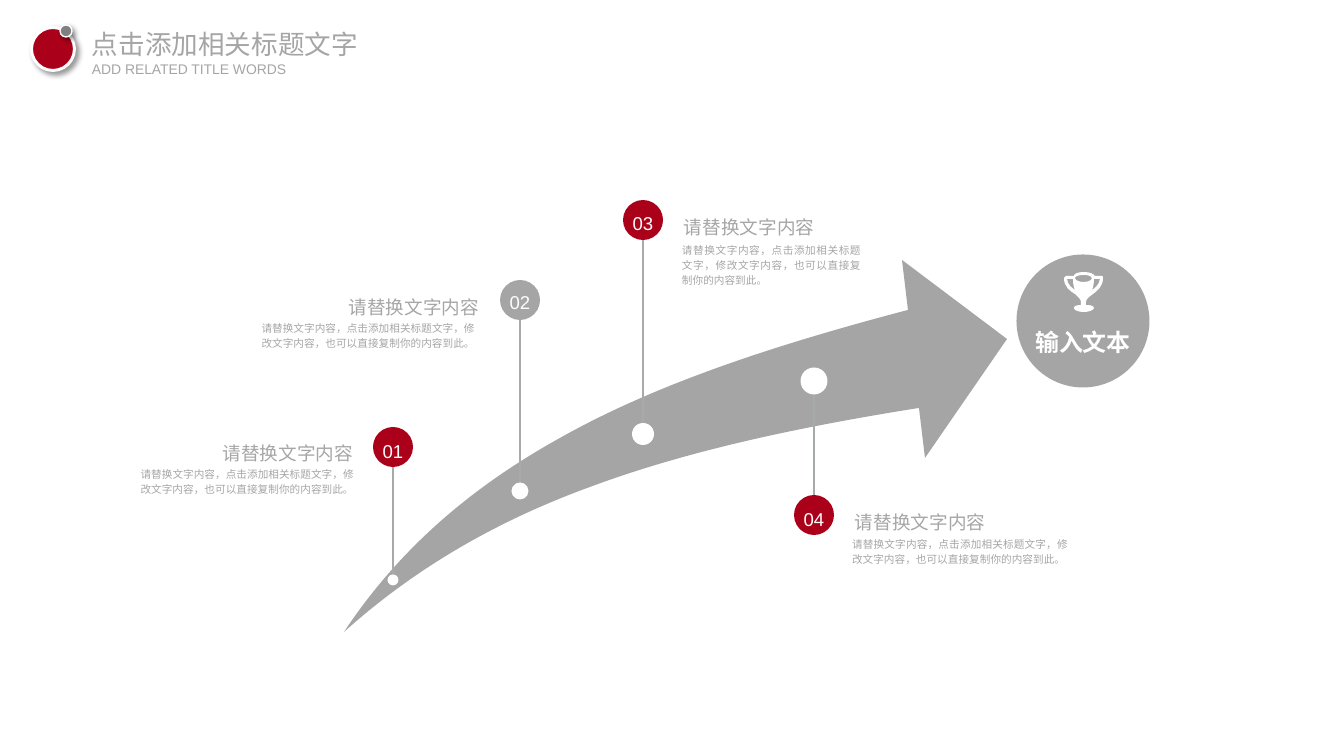
"""Build a slide with a rising curved arrow, four milestones and a goal."""
from lxml import etree
from pptx import Presentation
from pptx import util as u
from pptx.dml.color import RGBColor
from pptx.enum import shapes, text
from pptx.oxml import ns

PX = 9565
RED = RGBColor(0xAB, 0x00, 0x19)
GRAY = RGBColor(0xA5, 0xA5, 0xA5)
TEXT_GRAY = RGBColor(0xA6, 0xA6, 0xA6)
LINE_GRAY = RGBColor(0xA6, 0xAA, 0xA9)
DARK_GRAY = RGBColor(0x80, 0x80, 0x80)
NEAR_WHITE = RGBColor(0xFC, 0xFC, 0xFC)
WHITE = RGBColor(0xFF, 0xFF, 0xFF)
LEFT, CENTER = text.PP_ALIGN.LEFT, text.PP_ALIGN.CENTER
RIGHT, JUSTIFY = text.PP_ALIGN.RIGHT, text.PP_ALIGN.JUSTIFY
TOP, MIDDLE = text.MSO_ANCHOR.TOP, text.MSO_ANCHOR.MIDDLE
GROW, FIXED = text.MSO_AUTO_SIZE.SHAPE_TO_FIT_TEXT, text.MSO_AUTO_SIZE.NONE

presentation = Presentation()
presentation.slide_width = 1344 * PX
presentation.slide_height = 756 * PX
slide = presentation.slides.add_slide(presentation.slide_layouts[6])


def add_text(box, wording, size, color, align=LEFT, anchor=TOP, fit=GROW,
             spacing=1.2, before=10, wrap=True, bold=False):
    shape = slide.shapes.add_textbox(*(length * PX for length in box))
    frame = shape.text_frame
    frame.margin_left = frame.margin_right = frame.margin_top = frame.margin_bottom = 0
    frame.word_wrap = wrap
    frame.auto_size = fit
    frame.vertical_anchor = anchor
    paragraph = frame.paragraphs[0]
    paragraph.alignment = align
    paragraph.line_spacing = spacing
    paragraph.space_before = u.Pt(before)
    run = paragraph.add_run()
    run.text = wording
    run.font.name = "Arial"
    run.font.size = u.Pt(size)
    run.font.bold = bold
    run.font.color.rgb = color


def add_circle(center_x, center_y, diameter, color):
    size = diameter * PX
    shape = slide.shapes.add_shape(
        shapes.MSO_SHAPE.OVAL, center_x * PX - size // 2, center_y * PX - size // 2, size, size)
    shape.fill.solid()
    shape.fill.fore_color.rgb = color
    shape.line.fill.background()
    shape.shadow.inherit = False
    return shape


add_circle(1083, 321, 133, GRAY)

arrow = [
    [(344, 632), (397, 552, 468, 489, 560, 438), (654, 385, 771, 346, 908, 310),
     (902, 260), (1007, 339), (925, 458), (919, 408),
     (793, 428, 684, 452, 590, 487), (494, 522, 413, 570, 344, 632)],
]
trophy = [
    [(3, 7), (9, 7), (9, 12, 10, 16, 11, 18), (8, 16, 4, 13, 3, 7)],
    [(20, 3), (26, 3, 28, 5, 28, 6), (28, 7, 26, 10, 20, 10),
     (13, 10, 11, 7, 11, 6), (11, 5, 13, 3, 20, 3)],
    [(28, 18), (29, 16, 30, 12, 30, 7), (36, 7), (35, 13, 31, 16, 28, 18)],
    [(22, 30), (22, 27, 25, 25, 29, 22), (33, 19, 39, 15, 39, 6), (39, 5, 39, 4, 38, 4),
     (31, 4), (30, 2, 26, 0, 20, 0), (13, 0, 10, 2, 10, 4), (2, 4), (1, 4, 0, 5, 0, 6),
     (0, 15, 6, 19, 11, 22), (14, 25, 17, 27, 17, 30), (17, 33), (13, 33, 10, 34, 10, 36),
     (10, 38, 14, 40, 20, 40), (25, 40, 30, 38, 30, 36), (30, 34, 27, 33, 22, 33)],
]
for contours, left, top, color in ((arrow, 0, 0, GRAY), (trophy, 1064, 272, WHITE)):
    start_x, start_y = contours[0][0]
    builder = slide.shapes.build_freeform((left + start_x) * PX, (top + start_y) * PX)
    for index, contour in enumerate(contours):
        points = [((left + segment[i]) * PX, (top + segment[i + 1]) * PX)
                  for segment in contour for i in range(0, len(segment), 2)]
        if index:
            builder.move_to(*points[0])
        builder.add_line_segments(points[1:], close=True)
    outline = builder.convert_to_shape()
    outline.fill.solid()
    outline.fill.fore_color.rgb = color
    outline.line.fill.background()
    outline.shadow.inherit = False
    nodes = iter(list(outline._element.iter(ns.qn("a:lnTo"))))
    for contour in contours:
        for segment in contour[1:]:
            legs = [next(nodes) for _ in range(len(segment) // 2)]
            if len(legs) == 3:
                curve = etree.Element(ns.qn("a:cubicBezTo"))
                legs[0].addprevious(curve)
                for leg in legs:
                    curve.append(leg[0])
                    leg.getparent().remove(leg)

add_text((1034, 318, 98, 39), "输入文本", 18, WHITE, CENTER, MIDDLE, FIXED, 1.3, bold=True)

milestones = [
    ("01", 393, 447, 434, 580, 11, RED,
     (201, 438, 152, 25), RIGHT, (138, 465, 216, 31), RIGHT),
    ("02", 520, 300, 285, 491, 17, GRAY,
     (315, 292, 164, 25), RIGHT, (259, 319, 216, 30), RIGHT),
    ("03", 643, 220, 206, 434, 22, RED,
     (684, 212, 141, 26), LEFT, (682, 241, 179, 46), JUSTIFY),
    ("04", 814, 515, 502, 381, 27, RED,
     (855, 506, 141, 27), LEFT, (852, 535, 216, 31), JUSTIFY),
]
for (number, x, badge_y, number_top, dot_y, dot_size, color,
     title_box, title_align, body_box, body_align) in milestones:
    stem = slide.shapes.add_connector(
        shapes.MSO_CONNECTOR.STRAIGHT, x * PX, dot_y * PX, x * PX, badge_y * PX)
    stem.line.color.rgb = LINE_GRAY
    stem.line.width = u.Pt(1)
    etree.SubElement(stem._element.spPr, ns.qn("a:effectLst"))
    add_circle(x, badge_y, 40, color)
    add_circle(x, dot_y, dot_size, WHITE)
    add_text((x - 13, number_top, 26, 30), number, 14, NEAR_WHITE, CENTER, MIDDLE, FIXED)
    add_text(title_box, "请替换文字内容", 14, TEXT_GRAY, title_align, MIDDLE)
    add_text(body_box, "请替换文字内容，点击添加相关标题文字，修改文字内容，也可以直接复制你的内容到此。",
             8, TEXT_GRAY, body_align)

add_text((92, 28, 268, 33), "点击添加相关标题文字", 20, GRAY, spacing=1.0, before=0, wrap=False)
add_text((92, 61, 199, 17), "ADD RELATED TITLE WORDS", 10.5, GRAY,
         spacing=1.0, before=0, wrap=False)

for x, y, diameter, color, width in ((53, 49, 43, RED, 2.25), (66, 31, 12, DARK_GRAY, 1)):
    ornament = add_circle(x, y, diameter, color)
    ornament.line.color.rgb = WHITE
    ornament.line.width = u.Pt(width)
    effects = ornament._element.spPr.find(ns.qn("a:effectLst"))
    shadow = etree.SubElement(effects, ns.qn("a:outerShdw"), blurRad=str(u.Pt(4)),
                              dist=str(u.Pt(3)), dir="2700000", algn="tl", rotWithShape="0")
    shade = etree.SubElement(shadow, ns.qn("a:srgbClr"), val="000000")
    etree.SubElement(shade, ns.qn("a:alpha"), val="40000")

presentation.save("out.pptx")
